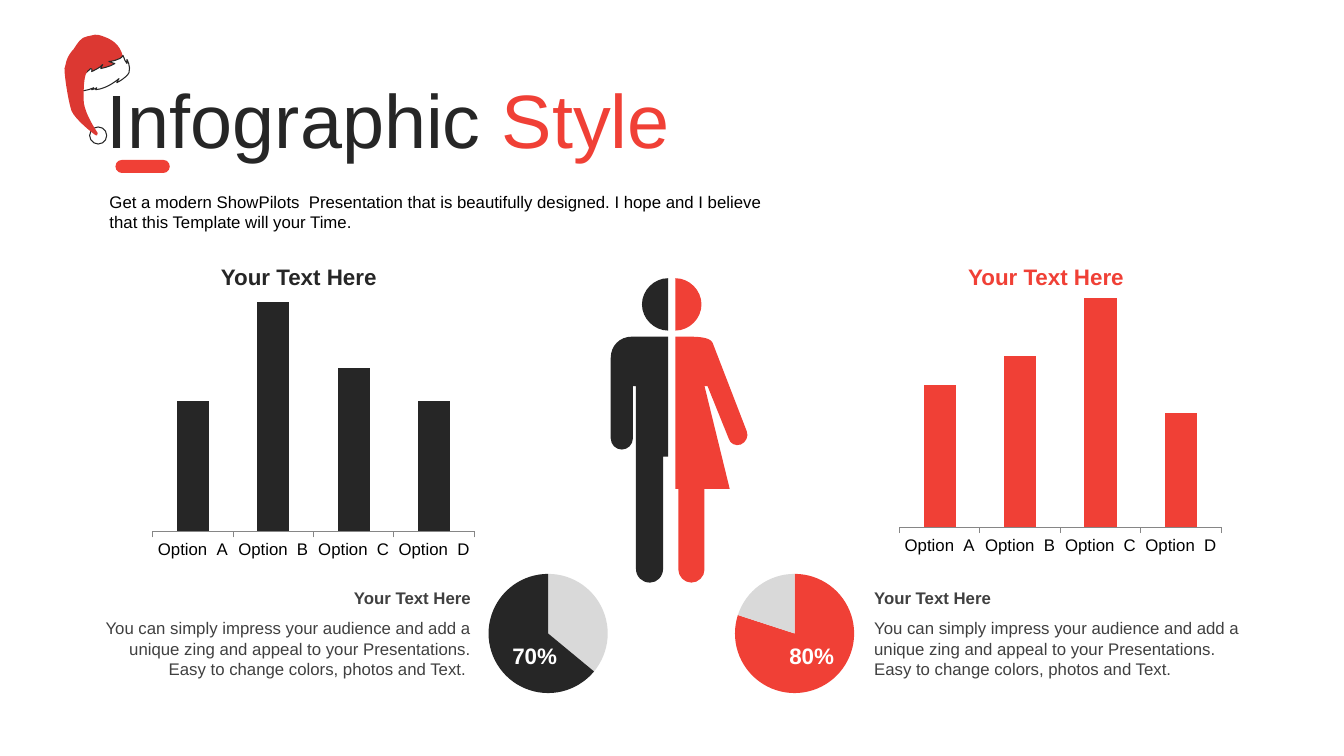
from lxml import etree
from pptx import Presentation
from pptx.chart import data
from pptx.dml.color import RGBColor
from pptx.enum import chart as charts, shapes, text
from pptx.oxml import ns
from pptx.util import Cm, Pt

BLACK = RGBColor(0x00, 0x00, 0x00)
DARK = RGBColor(0x26, 0x26, 0x26)
BODY = RGBColor(0x40, 0x40, 0x40)
AXIS = RGBColor(0x86, 0x86, 0x86)
REST = RGBColor(0xD9, 0xD9, 0xD9)
WHITE = RGBColor(0xFF, 0xFF, 0xFF)
RED = RGBColor(0xF0, 0x40, 0x36)
HAT_RED = RGBColor(0xDC, 0x38, 0x32)
LEFT, CENTER, RIGHT = text.PP_ALIGN.LEFT, text.PP_ALIGN.CENTER, text.PP_ALIGN.RIGHT

TITLE = [("Infographic", DARK), (" Style", RED)]
INTRO = ("Get a modern ShowPilots  Presentation that is beautifully designed. "
         "I hope and I believe that this Template will your Time.")
HEADING = "Your Text Here"
STORY = ("You can simply impress your audience and add a unique zing and appeal "
         "to your Presentations. Easy to change colors, photos and Text.")
OPTIONS = ["Option  A", "Option  B", "Option  C", "Option  D"]
SIDES = [
    dict(color=DARK, columns=[57, 100, 71, 57], columns_x=2.96, plot_height=0.77,
         axis_top=114, heading_x=4.95, shares=[36, 64], share_colors=[REST, DARK],
         pie_x=11.96, percent="70%", percent_x=12.47, story=STORY + " ", story_x=2.11,
         story_width=10.01, align=RIGHT),
    dict(color=RED, columns=[62, 75, 100, 50], columns_x=21.78, plot_height=0.758,
         axis_top=112.5, heading_x=23.78, shares=[80, 20], share_colors=[RED, REST],
         pie_x=18.17, percent="80%", percent_x=19.45, story=STORY, story_x=21.78,
         story_width=9.93, align=LEFT),
]

OUTLINE_UNIT = Cm(0.0254)
HAT_TOP = [[(69, 73), (68, 72, 66, 71, 65, 70), (64, 62, 68, 54, 73, 49),
            (77, 43, 80, 37, 87, 36), (94, 35, 94, 33, 102, 36),
            (111, 39, 119, 44, 122, 56), (117, 61, 111, 66, 105, 71),
            (98, 71, 89, 71, 83, 72), (78, 72, 75, 72, 69, 73)]]
HAT_BRIM = [[(126, 59), (126, 61, 126, 63, 126, 63), (125, 62, 125, 61, 124, 60),
             (123, 57, 122, 55, 122, 55), (120, 60, 108, 61, 108, 61),
             (110, 62, 114, 63, 114, 63), (110, 66, 100, 68, 100, 68),
             (100, 67, 102, 64, 102, 64), (100, 67, 91, 71, 91, 71),
             (93, 69, 90, 68, 90, 68), (87, 71, 84, 73, 84, 73),
             (87, 72, 87, 70, 87, 70), (87, 70, 81, 73, 75, 73),
             (69, 74, 68, 70, 68, 70), (66, 74, 69, 79, 69, 79),
             (68, 80, 67, 78, 67, 78), (69, 82, 74, 88, 74, 88),
             (73, 88, 72, 87, 72, 87), (72, 89, 74, 90, 74, 90),
             (75, 90, 76, 90, 78, 90), (85, 91, 93, 87, 93, 87),
             (92, 89, 91, 89, 91, 89), (94, 89, 96, 87, 96, 87),
             (95, 88, 95, 89, 95, 89), (107, 88, 118, 78, 118, 78),
             (117, 79, 116, 82, 116, 82), (116, 82, 126, 77, 128, 72),
             (130, 66, 126, 59, 126, 59)]]
HAT_TAIL = [[(92, 132), (92, 132, 75, 119, 71, 110), (68, 101, 64, 77, 64, 68),
             (65, 58, 87, 47, 91, 48), (96, 48, 89, 66, 86, 72),
             (83, 77, 83, 90, 83, 99), (83, 109, 91, 123, 97, 132),
             (96, 133, 98, 137, 92, 132)]]
MAN = [[(627, 334), (663, 334), (663, 453), (658, 453), (658, 564),
        (658, 572, 652, 578, 645, 578), (637, 578, 631, 572, 631, 564),
        (631, 383), (628, 383), (628, 435), (628, 441, 623, 446, 617, 446),
        (611, 446, 606, 441, 606, 435), (606, 355), (606, 343, 615, 334, 627, 334)],
       [(663, 276), (663, 328), (649, 328, 637, 316, 637, 302),
        (637, 288, 649, 276, 663, 276)]]
WOMAN = [[(680, 334), (691, 334, 704, 334, 707, 340), (741, 428),
          (743, 433, 740, 439, 735, 441), (730, 443, 724, 440, 723, 435),
          (702, 383), (699, 383), (724, 485), (699, 485), (699, 565),
          (699, 572, 693, 578, 686, 578), (679, 578, 673, 572, 673, 565),
          (673, 485), (670, 485), (670, 334), (680, 334)],
         [(670, 276), (684, 276, 696, 288, 696, 302),
          (696, 316, 684, 328, 670, 328), (670, 276)]]

prs = Presentation()
prs.slide_width, prs.slide_height = Cm(33.87), Cm(19.05)
slide = prs.slides.add_slide(prs.slide_layouts[5])


def apply(target, formats):
    for name, value in formats.items():
        setattr(target, name, value)


def write(box, runs, size, align=LEFT, bold=False, anchor=text.MSO_ANCHOR.TOP):
    apply(box.text_frame, dict(word_wrap=True, vertical_anchor=anchor,
                               auto_size=text.MSO_AUTO_SIZE.NONE))
    paragraph = box.text_frame.paragraphs[0]
    apply(paragraph, dict(alignment=align, line_spacing=1.0))
    for words, color in runs:
        run = paragraph.add_run()
        run.text = words
        apply(run.font, dict(name="Arial", size=Pt(size), bold=bold))
        run.font.color.rgb = color


def add_words(place, words, color, size, **formats):
    box = slide.shapes.add_textbox(*map(Cm, place))
    write(box, [(words, color)], size, **formats)


def paint(shape, fill, line=None):
    shape.shadow.inherit = False
    shape.fill.solid()
    shape.fill.fore_color.rgb = fill
    if line is None:
        shape.line.fill.background()
    else:
        shape.line.color.rgb = line
        shape.line.width = Pt(0.75)


def draw(outlines, fill, line=None):
    ends = [[tuple(v * OUTLINE_UNIT for v in segment[-2:]) for segment in outline]
            for outline in outlines]
    builder = slide.shapes.build_freeform(*ends[0][0])
    for index, points in enumerate(ends):
        if index:
            builder.move_to(*points[0])
        builder.add_line_segments(points[1:], close=True)
    figure = builder.convert_to_shape()
    segments = [segment for outline in outlines for segment in outline[1:]]
    for edge, segment in zip(list(figure.element.iter(ns.qn("a:lnTo"))), segments):
        if len(segment) == 6:
            edge.tag = ns.qn("a:cubicBezTo")
            for position in (0, 1):
                x, y = segment[2 * position:2 * position + 2]
                handle = etree.Element(ns.qn("a:pt"))
                handle.set("x", str(x * OUTLINE_UNIT - figure.left))
                handle.set("y", str(y * OUTLINE_UNIT - figure.top))
                edge.insert(position, handle)
    paint(figure, fill, line)


def add_graph(kind, place, categories, values, layout):
    numbers = data.CategoryChartData()
    numbers.categories = categories
    numbers.add_series("Series 1", values)
    graph = slide.shapes.add_chart(kind, *map(Cm, place), numbers).chart
    apply(graph, dict(has_title=False, has_legend=False))
    apply(graph.font, dict(name="Arial", size=Pt(12)))
    graph.font.color.rgb = BLACK
    area = graph.element.find(".//" + ns.qn("c:plotArea"))
    for old in area.findall(ns.qn("c:layout")):
        area.remove(old)
    frame = etree.Element(ns.qn("c:layout"))
    manual = etree.SubElement(frame, ns.qn("c:manualLayout"))
    settings = [("layoutTarget", "inner"), ("xMode", "edge"), ("yMode", "edge"),
                *zip("xywh", layout)]
    for name, value in settings:
        etree.SubElement(manual, ns.qn("c:" + name)).set("val", str(value))
    area.insert(0, frame)
    return graph


def add_columns(side):
    graph = add_graph(charts.XL_CHART_TYPE.COLUMN_STACKED,
                      (side["columns_x"], 6.51, 9.17, 8.56), OPTIONS, side["columns"],
                      (0.097, 0.034, 0.884, side["plot_height"]))
    apply(graph.plots[0], dict(gap_width=150, overlap=100, vary_by_categories=False))
    apply(graph.value_axis, dict(visible=False, has_major_gridlines=False,
                                 minimum_scale=0, maximum_scale=side["axis_top"]))
    graph.category_axis.major_tick_mark = charts.XL_TICK_MARK.OUTSIDE
    graph.category_axis.format.line.color.rgb = AXIS
    bars = graph.plots[0].series[0].format.fill
    bars.solid()
    bars.fore_color.rgb = side["color"]


def add_pie(side):
    graph = add_graph(charts.XL_CHART_TYPE.PIE, (side["pie_x"], 14.11, 3.71, 3.71),
                      ["1", "2"], side["shares"], (0.095, 0.095, 0.81, 0.81))
    graph.plots[0].vary_by_categories = True
    for index, color in enumerate(side["share_colors"]):
        share = graph.plots[0].series[0].points[index].format
        share.fill.solid()
        share.fill.fore_color.rgb = color
        share.line.fill.background()


title = slide.shapes.title
apply(title, dict(left=Cm(2.44), top=Cm(1.7), width=Cm(17.2), height=Cm(2.57)))
write(title, TITLE, 54, anchor=text.MSO_ANCHOR.MIDDLE)
add_words((2.51, 4.7, 17.12, 1.28), INTRO, BLACK, 12)

draw(HAT_TOP, HAT_RED)
pompom = slide.shapes.add_shape(shapes.MSO_SHAPE.OVAL, *map(Cm, (2.26, 3.2, 0.43, 0.43)))
paint(pompom, WHITE, DARK)
draw(HAT_BRIM, WHITE, DARK)
draw(HAT_TAIL, HAT_RED)
underline = slide.shapes.add_shape(shapes.MSO_SHAPE.ROUNDED_RECTANGLE,
                                   *map(Cm, (2.91, 4.03, 1.37, 0.33)))
underline.adjustments[0] = 0.5
paint(underline, RED)

for side in SIDES:
    add_columns(side)
    add_pie(side)
    add_words((side["heading_x"], 6.5, 5.16, 0.94), HEADING, side["color"], 16,
              align=CENTER, bold=True)
    add_words((side["percent_x"], 16.05, 2.01, 0.94), side["percent"], WHITE, 16,
              align=CENTER, bold=True, anchor=text.MSO_ANCHOR.MIDDLE)
    add_words((side["story_x"], 14.68, side["story_width"], 0.76), HEADING, BODY, 12,
              align=side["align"], bold=True)
    add_words((side["story_x"], 15.45, side["story_width"], 1.8), side["story"], BODY, 12,
              align=side["align"])

draw(MAN, DARK)
draw(WOMAN, RED)
prs.save("out.pptx")
